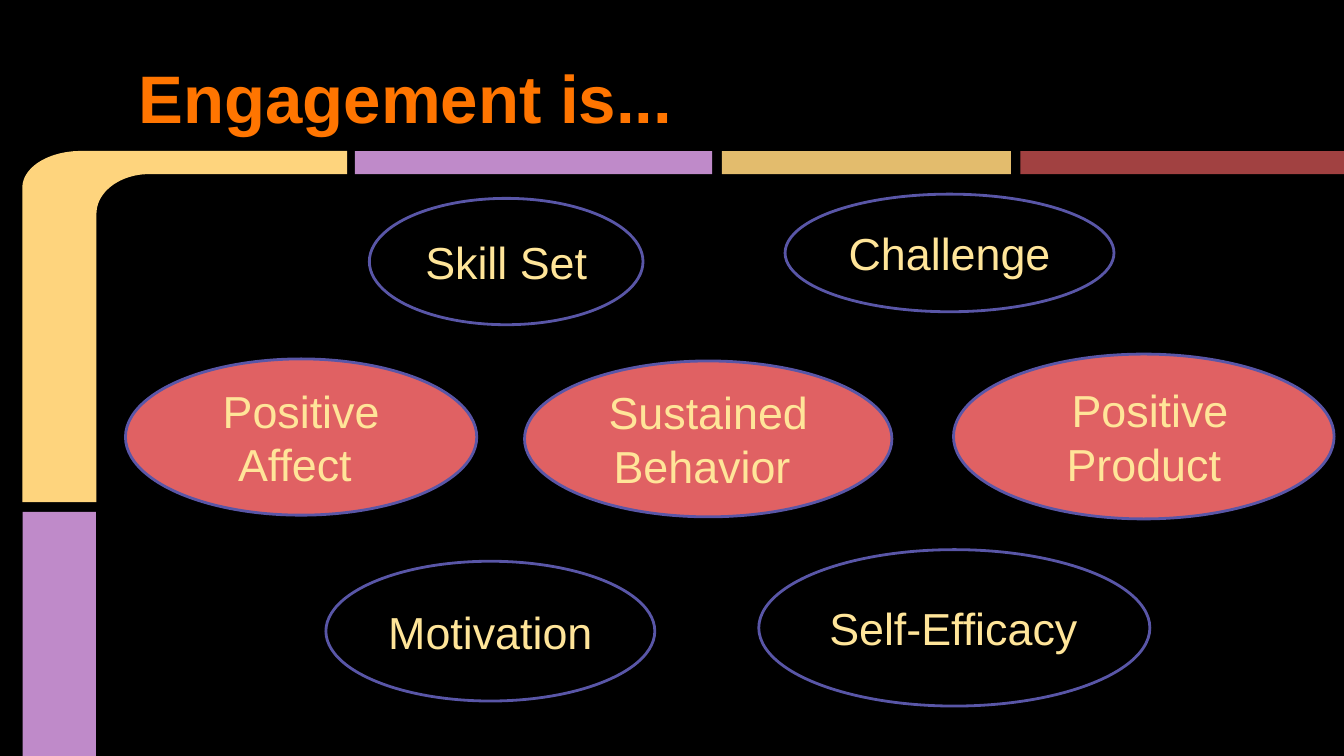
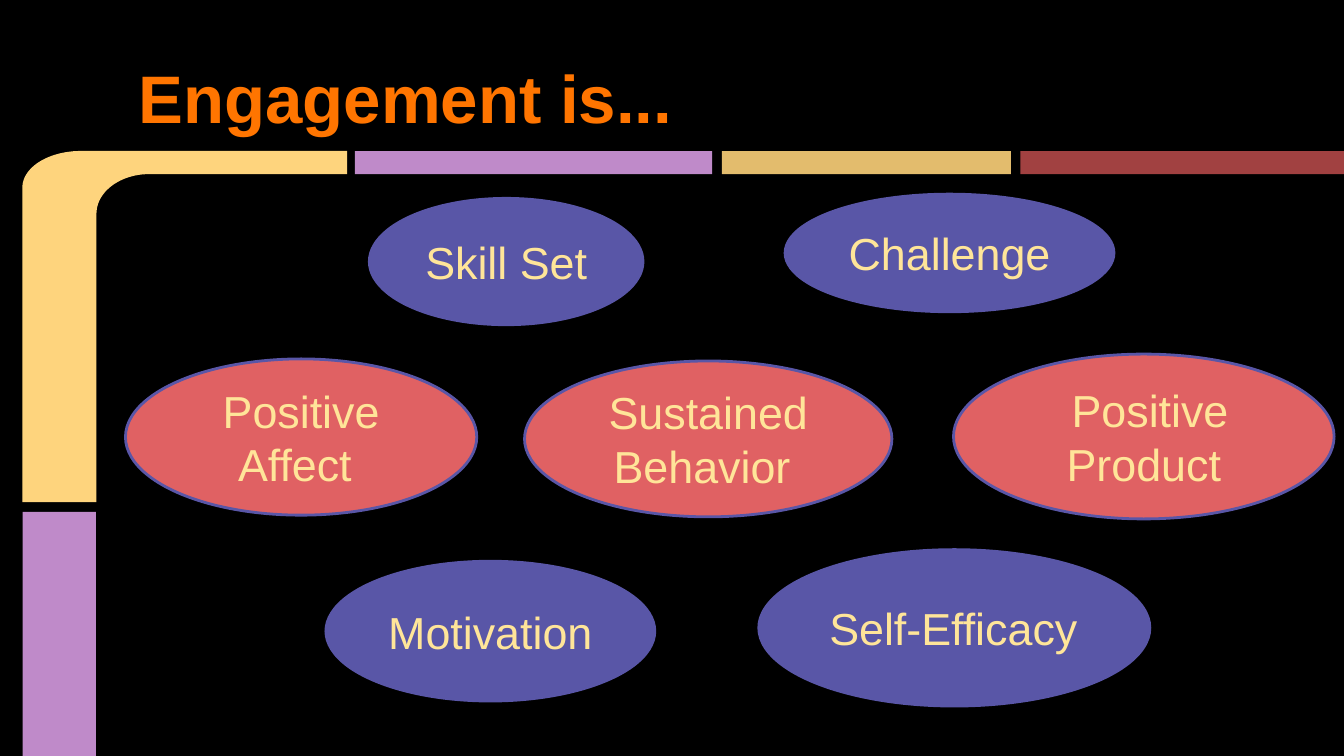
"""Build two "Engagement is..." slides, the second with its outer ellipses filled."""
import math
from dataclasses import dataclass

from pptx import Presentation
from pptx import util as u
from pptx.dml.color import RGBColor
from pptx.enum import shapes, text


@dataclass(frozen=True)
class Theme:
    """Colours, font and type sizes of the deck."""
    back: str = "000000"
    title: str = "FF7500"
    body: str = "FFE599"
    bend: str = "FED47D"
    lilac: str = "BF8AC9"
    sand: str = "E3BC6D"
    brick: str = "A14141"
    coral: str = "E06163"
    indigo: str = "5956A7"
    font: str = "Arial"
    title_size: float = 36
    body_size: float = 24
    line: float = 1.5
    inset: float = 7.2


T = Theme()
CENTER, LEFT = text.PP_ALIGN.CENTER, text.PP_ALIGN.LEFT

BARS = [
    ((12.1, 274.2, 39.3, 130.8), T.lilac),
    ((190.1, 80.9, 191.4, 12.4), T.lilac),
    ((386.7, 80.9, 154.9, 12.4), T.sand),
    ((546.7, 80.9, 173.3, 12.4), T.brick),
]
OUTCOMES = [
    ("Positive Affect ", (67.2, 192.3, 188.2, 83.7), CENTER),
    ("Sustained Behavior ", (281, 193.4, 196.8, 83.5), CENTER),
    (" Positive Product", (510.8, 189.7, 203.9, 88.3), CENTER),
]
CONDITIONS = [
    ("Motivation", (174.6, 300.7, 176.2, 74.9), CENTER),
    ("Self-Efficacy", (406.5, 294.5, 209.5, 83.8), LEFT),
    ("Skill Set", (197.9, 106.3, 146.6, 67.7), CENTER),
    ("Challenge", (420.6, 104, 176.2, 63), CENTER),
]


def rgb(color):
    """Turn a hex string into a colour."""
    return RGBColor.from_string(color)


def paint(sp, fill=None, line=None):
    """Set the fill and the outline of a shape, each absent if None."""
    sp.shadow.inherit = False
    if fill:
        sp.fill.solid()
        sp.fill.fore_color.rgb = rgb(fill)
    else:
        sp.fill.background()
    if line:
        sp.line.color.rgb = rgb(line)
        sp.line.width = u.Pt(T.line)
    else:
        sp.line.fill.background()


def write(sp, words, size, color, anchor, align=LEFT, bold=False):
    """Put one paragraph of text into a shape."""
    tf = sp.text_frame
    tf.word_wrap = True
    tf.vertical_anchor = anchor
    tf.margin_left = tf.margin_right = u.Pt(T.inset)
    tf.margin_top = tf.margin_bottom = u.Pt(T.inset)
    p = tf.paragraphs[0]
    p.text = words
    p.alignment = align
    p.font.name = T.font
    p.font.size = u.Pt(size)
    p.font.bold = bold
    p.font.color.rgb = rgb(color)


def add_preset(s, kind, box, fill=None, line=None):
    """Add a painted preset shape."""
    sp = s.shapes.add_shape(kind, *map(u.Pt, box))
    paint(sp, fill, line)
    return sp


def corner(cx, cy, rx, ry, steps=24):
    """Return points of an upper-left quarter ellipse, from its left to its top."""
    angles = [math.pi / 2 * i / steps for i in range(steps + 1)]
    return [(cx - rx * math.cos(a), cy - ry * math.sin(a)) for a in angles]


def add_bend(s):
    """Add the curved band that joins the left and top edges of the frame."""
    outer = corner(43.4, 100.5, 31.4, 19.6)
    inner = corner(80, 114.5, 28.3, 21.2)
    outline = [(12, 269), *outer, (185.9, 80.9), (185.9, 93.3), *inner[::-1], (51.7, 269)]
    points = [(u.Pt(x), u.Pt(y)) for x, y in outline]
    builder = s.shapes.build_freeform(*points[0])
    builder.add_line_segments(points[1:], close=True)
    paint(builder.convert_to_shape(), T.bend)


def add_frame(s, title):
    """Add the background, the coloured frame and the title."""
    s.background.fill.solid()
    s.background.fill.fore_color.rgb = rgb(T.back)
    add_bend(s)
    for box, color in BARS:
        add_preset(s, shapes.MSO_SHAPE.RECTANGLE, box, color)
    sp = s.shapes.add_textbox(*map(u.Pt, (67.2, 13, 616.3, 67.7)))
    write(sp, title, T.title_size, T.title, text.MSO_ANCHOR.BOTTOM, bold=True)


def add_ellipses(s, items, fill):
    """Add outlined ellipses with their labels."""
    for words, box, align in items:
        sp = add_preset(s, shapes.MSO_SHAPE.OVAL, box, fill, T.indigo)
        write(sp, words, T.body_size, T.body, text.MSO_ANCHOR.MIDDLE, align)


def main():
    """Build and save the deck."""
    prs = Presentation()
    prs.slide_width, prs.slide_height = u.Pt(720), u.Pt(405)
    for condition_fill in (None, T.indigo):
        s = prs.slides.add_slide(prs.slide_layouts[6])
        add_frame(s, "Engagement is...")
        add_ellipses(s, OUTCOMES, T.coral)
        add_ellipses(s, CONDITIONS, condition_fill)
    prs.save("out.pptx")


if __name__ == "__main__":
    main()
